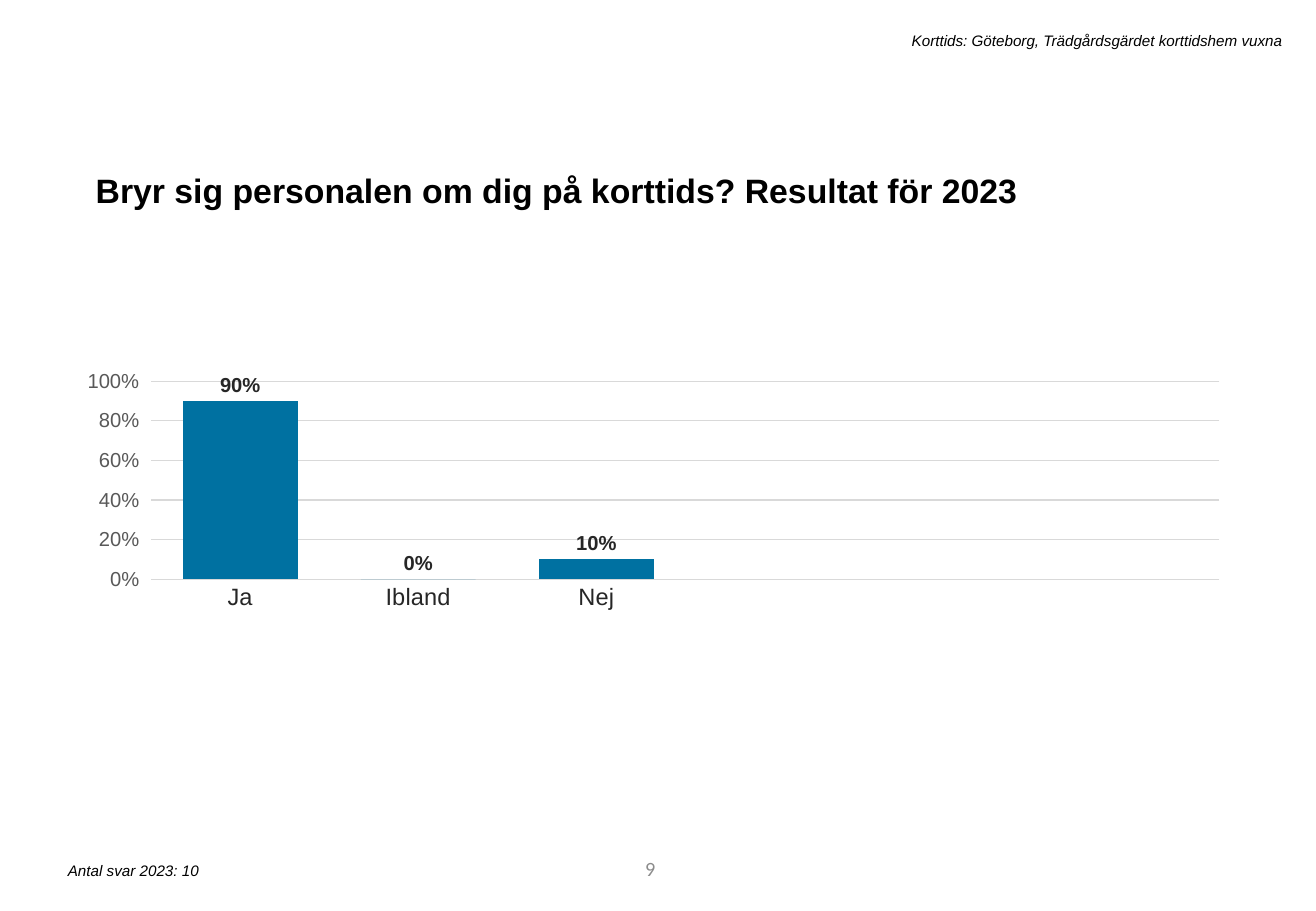
from pptx import Presentation
from pptx.chart.data import CategoryChartData
from pptx.dml.color import RGBColor
from pptx.enum.chart import XL_CHART_TYPE, XL_LABEL_POSITION, XL_TICK_MARK
from pptx.enum.text import MSO_ANCHOR, PP_ALIGN
from pptx.oxml import parse_xml
from pptx.oxml.ns import nsdecls
from pptx.util import Cm, Pt

GRID_GREY = "D9D9D9"
DARK_GREY = "262626"
NOTE = {"size": Pt(9), "italic": True}


def rgb(color):
    return RGBColor.from_string(color)


def format_font(font, color="000000", **values):
    font.color.rgb = rgb(color)
    for name, value in {"name": "Arial", **values}.items():
        setattr(font, name, value)


def format_line(line, color=GRID_GREY):
    line.color.rgb = rgb(color)
    line.width = Pt(0.75)


def add_text(slide, text, box, font, anchor=MSO_ANCHOR.TOP, **paragraph):
    tf = slide.shapes.add_textbox(*map(Cm, box)).text_frame
    tf.word_wrap = True
    tf.vertical_anchor = anchor
    p = tf.paragraphs[0]
    for name, value in paragraph.items():
        setattr(p, name, value)
    r = p.add_run()
    r.text = text
    format_font(r.font, **font)


def set_plot_area(chart, **layout):
    """Place the inner plot area, in fractions of the chart's size."""
    sizes = "".join(f'<c:{k} val="{v}"/>' for k, v in layout.items())
    plot_area = chart.element.chart.plotArea
    for old in plot_area.findall("{*}layout"):
        plot_area.remove(old)
    plot_area.insert(0, parse_xml(
        f'<c:layout {nsdecls("c")}><c:manualLayout><c:layoutTarget val="inner"/>'
        f'<c:xMode val="edge"/><c:yMode val="edge"/>{sizes}'
        '</c:manualLayout></c:layout>'))


def format_axes(chart):
    cat_axis, val_axis = chart.category_axis, chart.value_axis
    cat_axis.major_tick_mark = XL_TICK_MARK.NONE
    format_line(cat_axis.format.line)
    format_font(cat_axis.tick_labels.font, DARK_GREY, size=Pt(14))

    scale = {"minimum_scale": 0, "maximum_scale": 1, "major_unit": 0.2,
             "major_tick_mark": XL_TICK_MARK.OUTSIDE}
    for name, value in scale.items():
        setattr(val_axis, name, value)
    val_axis.format.line.fill.background()
    format_line(val_axis.major_gridlines.format.line)
    labels = val_axis.tick_labels
    labels.number_format, labels.number_format_is_linked = "0%", False
    format_font(labels.font, "595959", size=Pt(12))


def format_columns(plot, color):
    plot.gap_width = 55
    plot.vary_by_categories = False
    series = plot.series[0]
    series.invert_if_negative = False
    series.format.fill.solid()
    series.format.fill.fore_color.rgb = rgb(color)
    labels = series.data_labels
    values = {"show_value": True, "position": XL_LABEL_POSITION.OUTSIDE_END,
              "number_format": "0%", "number_format_is_linked": False}
    for name, value in values.items():
        setattr(labels, name, value)
    format_font(labels.font, DARK_GREY, size=Pt(12), bold=True)


def add_answer_chart(slide, answers, box):
    data = CategoryChartData(number_format="0%")
    data.categories = [label for label, _ in answers]
    data.add_series("Series 1", [share for _, share in answers])
    chart = slide.shapes.add_chart(
        XL_CHART_TYPE.COLUMN_CLUSTERED, *map(Cm, box), data).chart
    chart.has_legend = False
    chart.has_title = False
    format_font(chart.font, size=Pt(10))
    set_plot_area(chart, x=0.054, y=0.154, w=0.937, h=0.413)
    format_axes(chart)
    format_columns(chart.plots[0], "0071A1")


def main():
    prs = Presentation()
    prs.slide_width, prs.slide_height = Cm(27.51), Cm(19.05)
    slide = prs.slides.add_slide(prs.slide_layouts[6])

    add_text(slide, "9", (7.75, 17.65, 6.2, 1.02),
             {"name": "Calibri", "size": Pt(12), "color": "8C8C8C"},
             MSO_ANCHOR.MIDDLE, alignment=PP_ALIGN.RIGHT)
    add_text(slide, "Bryr sig personalen om dig på korttids? Resultat för 2023",
             (1.75, 3.25, 23.88, 1.19), {"size": Pt(20), "bold": True},
             line_spacing=1.2, space_before=Pt(10))
    add_text(slide, "Korttids: Göteborg, Trädgårdsgärdet korttidshem vuxna",
             (4.55, 0.53, 22.5, 0.64), NOTE, alignment=PP_ALIGN.RIGHT)
    add_text(slide, "Antal svar 2023: 10", (1.17, 17.88, 11.2, 0.64), NOTE)

    answers = [("Ja", 0.9), ("Ibland", 0), ("Nej", 0.1),
               ("", None), ("", None), ("", None)]
    add_answer_chart(slide, answers, (1.83, 6.43, 23.88, 10.03))

    prs.save("out.pptx")


if __name__ == "__main__":
    main()
